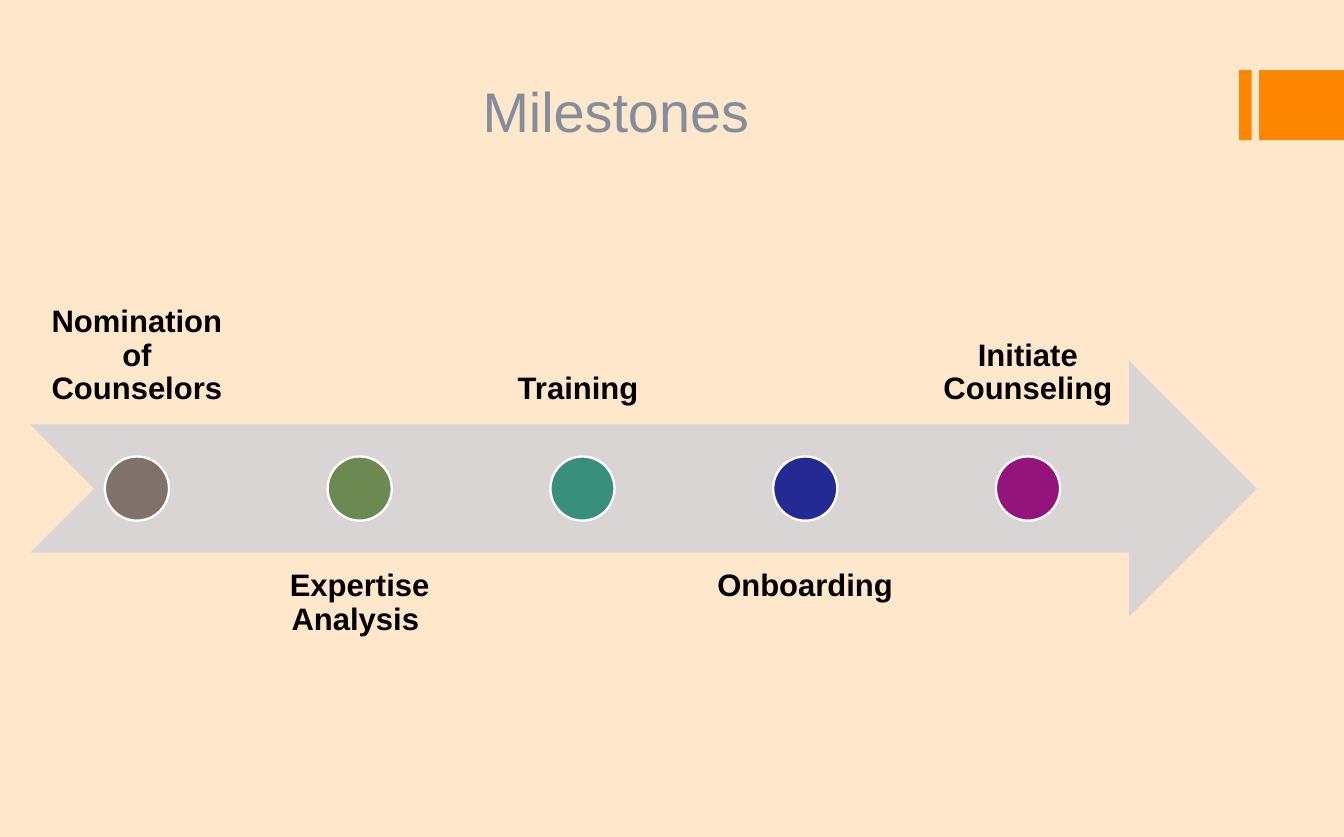
"""Build the Milestones slide: five steps along a notched arrow."""
from dataclasses import dataclass

from pptx import Presentation
from pptx import util as u
from pptx.dml.color import RGBColor
from pptx.enum import shapes, text
from pptx.shapes.autoshape import Shape
from pptx.slide import Slide

FONT = "Arial"
CREAM = RGBColor(0xFF, 0xE7, 0xCC)
ORANGE = RGBColor(0xFF, 0x86, 0x00)
ARROW_GRAY = RGBColor(0xD8, 0xD5, 0xD4)
TITLE_GRAY = RGBColor(0x83, 0x8D, 0x9B)
BLACK = RGBColor(0x00, 0x00, 0x00)
WHITE = RGBColor(0xFF, 0xFF, 0xFF)
TAUPE = RGBColor(0x80, 0x71, 0x6A)
GREEN = RGBColor(0x6B, 0x89, 0x50)
TEAL = RGBColor(0x39, 0x90, 0x7A)
BLUE = RGBColor(0x25, 0x29, 0x93)
PURPLE = RGBColor(0x94, 0x14, 0x7C)


@dataclass(frozen=True)
class Box:
    left: float
    top: float
    width: float
    height: float

    def lengths(self) -> tuple[u.Length, ...]:
        return tuple(u.Pt(value) for value in (self.left, self.top, self.width, self.height))


@dataclass(frozen=True)
class Milestone:
    label: str
    color: RGBColor


MILESTONES = (
    Milestone("Nomination of Counselors", TAUPE),
    Milestone("Expertise Analysis ", GREEN),
    Milestone("Training ", TEAL),
    Milestone("Onboarding ", BLUE),
    Milestone("Initiate Counseling", PURPLE),
)
TITLE = Box(37.5, 36, 720, 60)
ACCENT_BARS = (Box(800, 45.2, 8.1, 45.2), Box(812.8, 45.2, 54.8, 45.2))
ARROW = Box(19.6, 232.4, 792, 165.6)
FIRST_LEFT = 20
STEP = 143.8
LABEL_WIDTH = 136.8
LABEL_HEIGHT = 165.6
LABEL_TOPS = (108, 356.4)
LABEL_INSET = 11.4
DOT_SIZE = 41.4


def add_filled(slide: Slide, kind: shapes.MSO_SHAPE, box: Box, color: RGBColor) -> Shape:
    shape = slide.shapes.add_shape(kind, *box.lengths())
    shape.shadow.inherit = False
    shape.fill.solid()
    shape.fill.fore_color.rgb = color
    shape.line.fill.background()
    return shape


def write_centered(shape: Shape, words: str, size: float, color: RGBColor,
                   bold: bool, anchor: text.MSO_ANCHOR) -> None:
    frame = shape.text_frame
    frame.text = words
    frame.word_wrap = True
    frame.auto_size = text.MSO_AUTO_SIZE.NONE
    frame.vertical_anchor = anchor
    paragraph = frame.paragraphs[0]
    paragraph.alignment = text.PP_ALIGN.CENTER
    for run in paragraph.runs:
        run.font.name = FONT
        run.font.size = u.Pt(size)
        run.font.bold = bold
        run.font.color.rgb = color


def add_title(slide: Slide) -> None:
    title = slide.shapes.title
    title.left, title.top, title.width, title.height = TITLE.lengths()
    write_centered(title, "Milestones", 36, TITLE_GRAY, False, text.MSO_ANCHOR.BOTTOM)


def add_milestone(slide: Slide, index: int, milestone: Milestone) -> None:
    left = FIRST_LEFT + index * STEP
    below = index % 2
    box = Box(left, LABEL_TOPS[below], LABEL_WIDTH, LABEL_HEIGHT)
    label = slide.shapes.add_textbox(*box.lengths())
    anchor = text.MSO_ANCHOR.TOP if below else text.MSO_ANCHOR.BOTTOM
    write_centered(label, milestone.label, 20, BLACK, True, anchor)
    frame = label.text_frame
    frame.margin_left = frame.margin_right = u.Pt(LABEL_INSET)
    frame.margin_top = frame.margin_bottom = u.Pt(LABEL_INSET)
    frame.paragraphs[0].line_spacing = 0.9

    dot_left = left + (LABEL_WIDTH - DOT_SIZE) / 2
    dot_top = ARROW.top + (ARROW.height - DOT_SIZE) / 2
    dot = add_filled(slide, shapes.MSO_SHAPE.OVAL,
                     Box(dot_left, dot_top, DOT_SIZE, DOT_SIZE), milestone.color)
    dot.line.color.rgb = WHITE
    dot.line.width = u.Pt(1.5)


def main() -> None:
    presentation = Presentation()
    presentation.slide_width = u.Pt(867.6)
    presentation.slide_height = u.Pt(540)
    slide = presentation.slides.add_slide(presentation.slide_layouts.get_by_name("Title Only"))
    slide.background.fill.solid()
    slide.background.fill.fore_color.rgb = CREAM
    add_title(slide)
    for bar in ACCENT_BARS:
        add_filled(slide, shapes.MSO_SHAPE.RECTANGLE, bar, ORANGE)
    add_filled(slide, shapes.MSO_SHAPE.NOTCHED_RIGHT_ARROW, ARROW, ARROW_GRAY)
    for index, milestone in enumerate(MILESTONES):
        add_milestone(slide, index, milestone)
    presentation.save("out.pptx")


if __name__ == "__main__":
    main()
